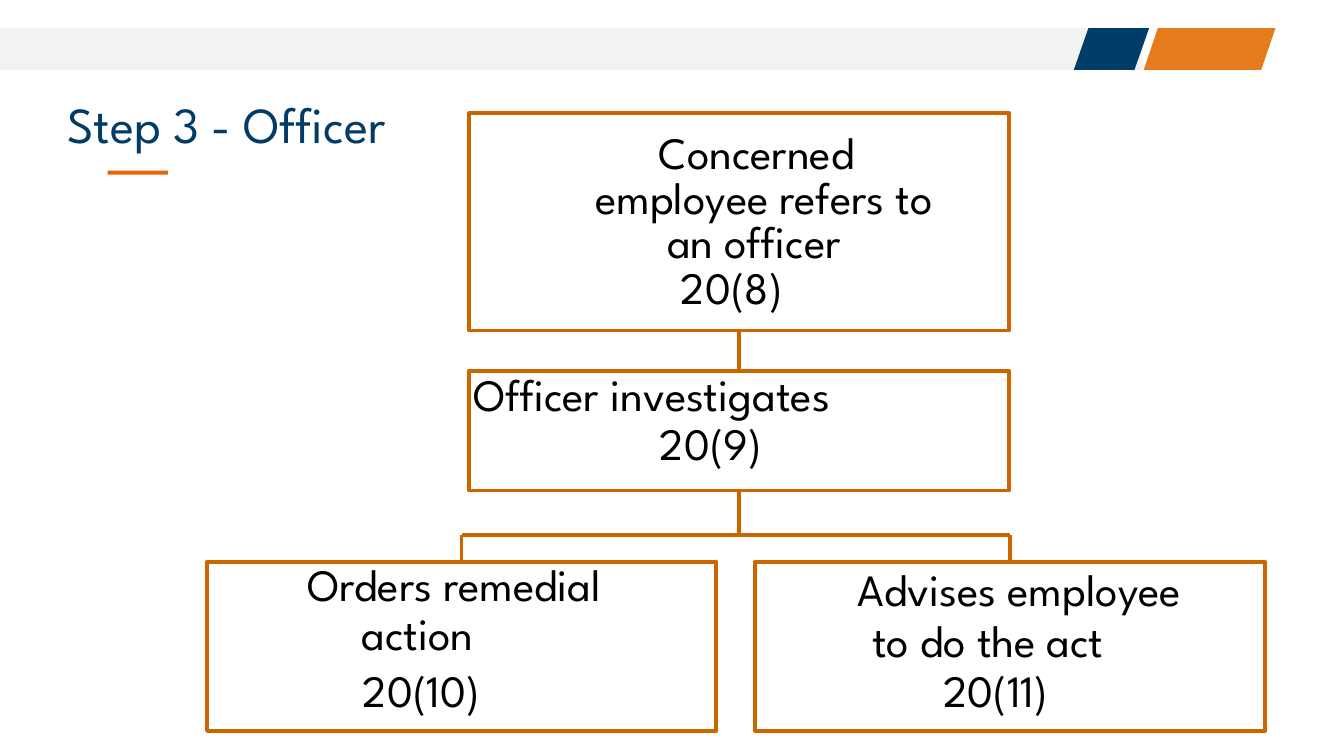
from lxml import etree
from pptx import Presentation
from pptx.dml.color import RGBColor
from pptx.enum.shapes import MSO_CONNECTOR, MSO_SHAPE
from pptx.enum.text import MSO_ANCHOR, MSO_AUTO_SIZE, PP_ALIGN
from pptx.oxml.ns import qn
from pptx.util import Inches, Pt

RECTANGLE = MSO_SHAPE.RECTANGLE
PARALLELOGRAM = MSO_SHAPE.PARALLELOGRAM
STRAIGHT = MSO_CONNECTOR.STRAIGHT
LEFT, CENTER = PP_ALIGN.LEFT, PP_ALIGN.CENTER
TOP, BOTTOM = MSO_ANCHOR.TOP, MSO_ANCHOR.BOTTOM
NO_FIT = MSO_AUTO_SIZE.NONE
TOP_SIDE, BOTTOM_SIDE = 0, 2

FONT = "League Spartan"
NAVY, ORANGE, GREY = "003E69", "E47C1D", "F2F2F2"
TITLE_COLOR, ACCENT, OUTLINE, BLACK = "003C67", "EB6300", "CC6600", "000000"


def color(value):
    return RGBColor.from_string(value)


def middle(box):
    return box.left + box.width // 2


def write(frame, text, size=24, ink=BLACK, align=LEFT, anchor=TOP, margins=(0, 0), spacing=None):
    frame.word_wrap = True
    frame.auto_size = NO_FIT
    frame.vertical_anchor = anchor
    frame.margin_left = frame.margin_right = Inches(margins[0])
    frame.margin_top = frame.margin_bottom = Inches(margins[1])
    para = frame.paragraphs[0]
    para.alignment = align
    para.line_spacing = spacing
    span = para.add_run()
    span.text = text
    span.font.name = FONT
    span.font.size = Pt(size)
    span.font.color.rgb = color(ink)


class Slide:
    def __init__(self, deck):
        self.page = deck.slides.add_slide(deck.slide_layouts[5])

    def title(self, text, left, top, width, height):
        box = self.page.shapes.title
        box.left, box.top = Inches(left), Inches(top)
        box.width, box.height = Inches(width), Inches(height)
        write(box.text_frame, text, size=27, ink=TITLE_COLOR, anchor=BOTTOM,
              margins=(0.07, 0.04), spacing=0.9)

    def shape(self, kind, left, top, width, height, fill=None, line=None, slant=None):
        box = self.page.shapes.add_shape(
            kind, Inches(left), Inches(top), Inches(width), Inches(height))
        box.shadow.inherit = False
        if slant is not None:
            box.adjustments[0] = slant
        if fill:
            box.fill.solid()
            box.fill.fore_color.rgb = color(fill)
        else:
            box.fill.background()
        if line:
            box.line.color.rgb = color(line)
            box.line.width = Pt(2)
        else:
            box.line.fill.background()
        return box

    def label(self, text, left, top, width, align):
        box = self.page.shapes.add_textbox(
            Inches(left), Inches(top), Inches(width), Inches(0.4))
        write(box.text_frame, text, align=align)

    def step(self, left, top, width, height, labels):
        for label in labels:
            self.label(*label)
        return self.shape(RECTANGLE, left, top, width, height, line=OUTLINE)

    def connector(self, start, end, source=None, target=None):
        link = self.page.shapes.add_connector(STRAIGHT, *start, *end)
        link.line.color.rgb = color(OUTLINE)
        link.line.width = Pt(2)
        etree.SubElement(link._element.spPr, qn("a:effectLst"))
        if source:
            link.begin_connect(source, BOTTOM_SIDE)
        if target:
            link.end_connect(target, TOP_SIDE)


def main():
    deck = Presentation()
    deck.slide_width = Inches(10)
    deck.slide_height = deck.slide_width * 9 // 16
    slide = Slide(deck)

    slide.shape(RECTANGLE, 0, 0.21, 8.5, 0.31, fill=GREY)
    slide.shape(PARALLELOGRAM, 8.51, 0.21, 0.98, 0.31, fill=ORANGE, slant=0.34)
    slide.shape(PARALLELOGRAM, 7.99, 0.21, 0.56, 0.31, fill=NAVY, slant=0.35)
    slide.shape(RECTANGLE, 0.8, 1.27, 0.45, 0.03, fill=ACCENT)
    slide.title("Step 3 - Officer", 0.43, 0.81, 9, 0.38)

    referral = slide.step(3.49, 0.84, 4.02, 1.62, [
        ("Concerned", 4.31, 0.93, 2.64, CENTER),
        ("employee refers to", 3.55, 1.26, 4.27, CENTER),
        ("an officer", 4.52, 1.59, 2.18, CENTER),
        ("20(8)", 4.88, 1.93, 1.13, CENTER),
    ])
    inquiry = slide.step(3.49, 2.76, 4.02, 0.89, [
        ("Officer investigates", 3.52, 2.73, 4.02, LEFT),
        ("20(9)", 4.91, 3.09, 1.04, LEFT),
    ])
    order = slide.step(1.54, 4.18, 3.79, 1.26, [
        ("Orders remedial", 1.58, 4.14, 3.6, CENTER),
        ("action", 2.69, 4.51, 1.45, LEFT),
        ("20(10)", 2.7, 4.93, 1.37, LEFT),
    ])
    advice = slide.step(5.62, 4.18, 3.79, 1.26, [
        ("Advises employee", 5.66, 4.18, 3.85, CENTER),
        ("to do the act", 6.49, 4.56, 2.17, LEFT),
        ("20(11)", 7.02, 4.93, 0.99, LEFT),
    ])

    trunk, fork = middle(inquiry), Inches(3.98)
    slide.connector((trunk, referral.top + referral.height), (trunk, inquiry.top),
                    source=referral, target=inquiry)
    slide.connector((trunk, inquiry.top + inquiry.height), (trunk, fork), source=inquiry)
    for outcome in (order, advice):
        branch = middle(outcome)
        slide.connector((trunk, fork), (branch, fork))
        slide.connector((branch, fork), (branch, outcome.top), target=outcome)

    deck.save("out.pptx")


if __name__ == "__main__":
    main()
